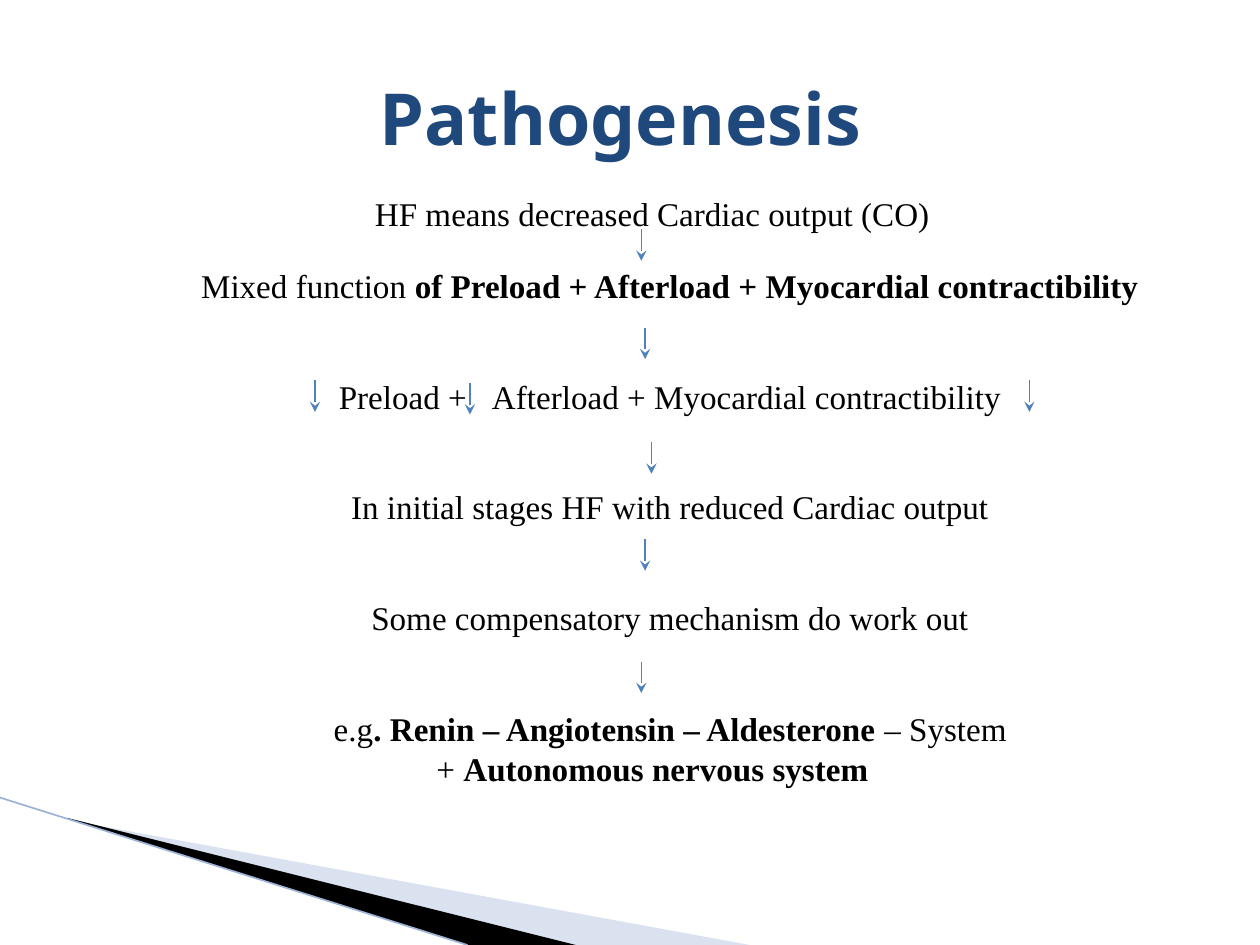
"""Build the Pathogenesis slide on heart failure."""
from typing import NamedTuple

from lxml.etree import SubElement
from pptx import Presentation
from pptx.dml.color import RGBColor
from pptx.enum.shapes import MSO_CONNECTOR
from pptx.enum.text import MSO_ANCHOR, PP_ALIGN
from pptx.oxml.ns import qn
from pptx.util import Inches, Pt

BODY_FONT, TITLE_FONT = "Times New Roman", "Noto Sans"
BLACK, NAVY, ARROW_BLUE, EDGE_BLUE, PALE_BLUE = "000000", "1F497D", "4F81BD", "9CB2D5", "A4B8DA"
ARROW_LENGTH = 0.25
HANGING = -0.28
STEP_GAP = 45.2


class Phrase(NamedTuple):
    """A piece of a step with its weight and letter spacing in points."""
    text: str
    bold: bool = False
    spacing: float = 0


class Step(NamedTuple):
    """A line of the flow with its space before and first-line indent."""
    phrases: list[Phrase]
    gap: float = STEP_GAP
    indent: float = 0


class Wedge(NamedTuple):
    """A corner decoration with its corners, colour and opacity in percent."""
    corners: list[tuple[float, float]]
    colour: str
    opacity: int = 100


class Arrow(NamedTuple):
    """The starting point of a downward arrow."""
    x: float
    y: float


WEDGES = [
    Wedge([(0.55, 6.51), (5.95, 7.5), (4.56, 7.5), (0.55, 6.5)], PALE_BLUE, 40),
    Wedge([(0.53, 6.49), (4.57, 7.5), (3.72, 7.5), (0.54, 6.5)], BLACK),
]

STEPS = [
    Step([Phrase("HF means decreased Cardiac output (CO)")], 0, HANGING),
    Step([Phrase("Mixed function "),
          Phrase("of Preload + Afterload + Myocardial contractibility", True)], 22.6),
    Step([Phrase("Preload +"), Phrase(" ", spacing=9.45),
          Phrase("Afterload + Myocardial contractibility")]),
    Step([Phrase("In initial stages HF with reduced Cardiac output")]),
    Step([Phrase("Some compensatory mechanism do work out")]),
    Step([Phrase("e.g"), Phrase(". Renin – Angiotensin – Aldesterone ", True),
          Phrase("– System")]),
    Step([Phrase("+ "), Phrase("Autonomous nervous system", True)], 4.9, HANGING),
]

FLOW_ARROWS = [Arrow(5.09, 1.82), Arrow(5.12, 2.6), Arrow(5.17, 3.51),
               Arrow(5.12, 4.28), Arrow(5.09, 5.25)]
CHANGE_ARROWS = [Arrow(2.5, 3.02), Arrow(3.73, 3.04), Arrow(8.17, 3.02)]


def rgb(colour: str) -> RGBColor:
    """Turn a hex string into a colour."""
    return RGBColor.from_string(colour)


def style_run(run, font: str, size: float, colour: str, bold: bool) -> None:
    """Set the look of a run."""
    run.font.name = font
    run.font.size = Pt(size)
    run.font.bold = bold
    run.font.color.rgb = rgb(colour)


def add_frame(slide, left: float, top: float, width: float, height: float):
    """Add a wrapping text box and return its text frame."""
    frame = slide.shapes.add_textbox(
        Inches(left), Inches(top), Inches(width), Inches(height)).text_frame
    frame.word_wrap = True
    return frame


def draw_wedge(slide, wedge: Wedge) -> None:
    """Draw a filled wedge without an outline."""
    points = [(Inches(x), Inches(y)) for x, y in wedge.corners]
    builder = slide.shapes.build_freeform(*points[0])
    builder.add_line_segments(points[1:])
    shape = builder.convert_to_shape()
    shape.shadow.inherit = False
    shape.line.fill.background()
    shape.fill.solid()
    shape.fill.fore_color.rgb = rgb(wedge.colour)
    if wedge.opacity < 100:
        colour = shape.fill._xPr.find(f".//{qn('a:srgbClr')}")
        SubElement(colour, qn("a:alpha"), val=str(wedge.opacity * 1000))


def draw_line(slide, start: tuple[float, float], end: tuple[float, float],
              colour: str, width: float, arrowhead: bool = False) -> None:
    """Draw a straight line, with an arrowhead at its end if asked."""
    line = slide.shapes.add_connector(
        MSO_CONNECTOR.STRAIGHT, *(Inches(value) for value in (*start, *end)))
    line.line.color.rgb = rgb(colour)
    line.line.width = Pt(width)
    if arrowhead:
        SubElement(line.line._get_or_add_ln(), qn("a:tailEnd"), type="stealth")
    SubElement(line._element.spPr, qn("a:effectLst"))


def draw_arrow(slide, arrow: Arrow) -> None:
    """Draw a short downward arrow."""
    draw_line(slide, arrow, (arrow.x, arrow.y + ARROW_LENGTH), ARROW_BLUE, 0.79, True)


def write_step(paragraph, step: Step) -> None:
    """Write one line of the flow."""
    paragraph.alignment = PP_ALIGN.CENTER
    paragraph.line_spacing = 0.8
    paragraph.space_before = Pt(step.gap)
    properties = paragraph._p.get_or_add_pPr()
    properties.set("marL", str(Inches(0.4)))
    properties.set("indent", str(Inches(step.indent)))
    for phrase in step.phrases:
        run = paragraph.add_run()
        run.text = phrase.text
        style_run(run, BODY_FONT, 18.9, BLACK, phrase.bold)
        if phrase.spacing:
            run.font._element.set("spc", str(round(phrase.spacing * 100)))


def main() -> None:
    """Build and save the slide."""
    presentation = Presentation()
    presentation.slide_width, presentation.slide_height = Inches(10), Inches(7.5)
    slide = presentation.slides.add_slide(presentation.slide_layouts[6])

    for wedge in WEDGES:
        draw_wedge(slide, wedge)
    draw_line(slide, (0, 6.33), (3.71, 7.5), EDGE_BLUE, 0.95)

    flow = add_frame(slide, 0.5, 1.55, 9.24, 5.44)
    for index, step in enumerate(STEPS):
        write_step(flow.add_paragraph() if index else flow.paragraphs[0], step)

    title = add_frame(slide, 0.5, 0.3, 9, 1.25)
    title.vertical_anchor = MSO_ANCHOR.MIDDLE
    title.text = "Pathogenesis "
    heading = title.paragraphs[0]
    heading.alignment = PP_ALIGN.CENTER
    style_run(heading.runs[0], TITLE_FONT, 41, NAVY, True)

    for arrow in FLOW_ARROWS + CHANGE_ARROWS:
        draw_arrow(slide, arrow)

    presentation.save("out.pptx")


if __name__ == "__main__":
    main()
